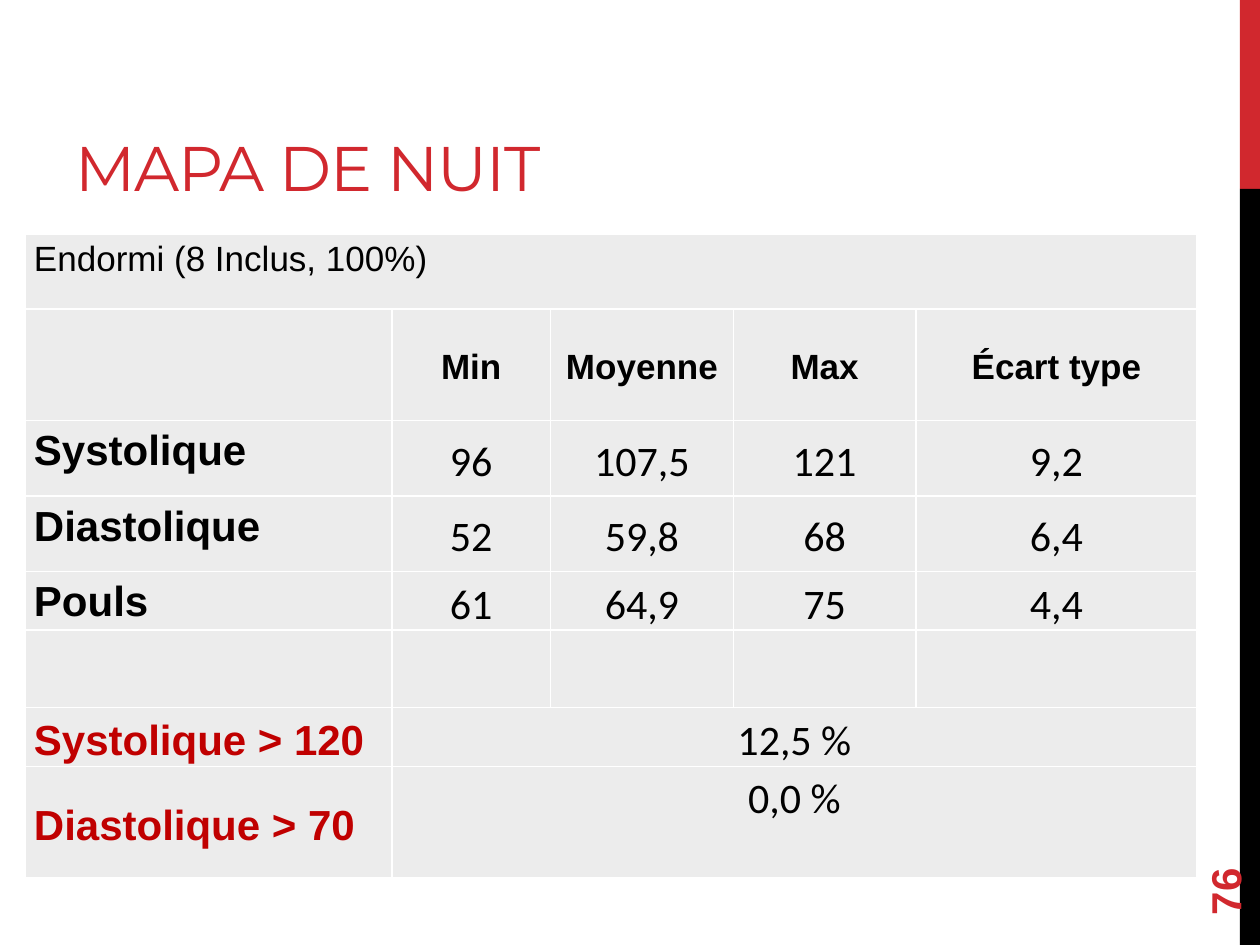
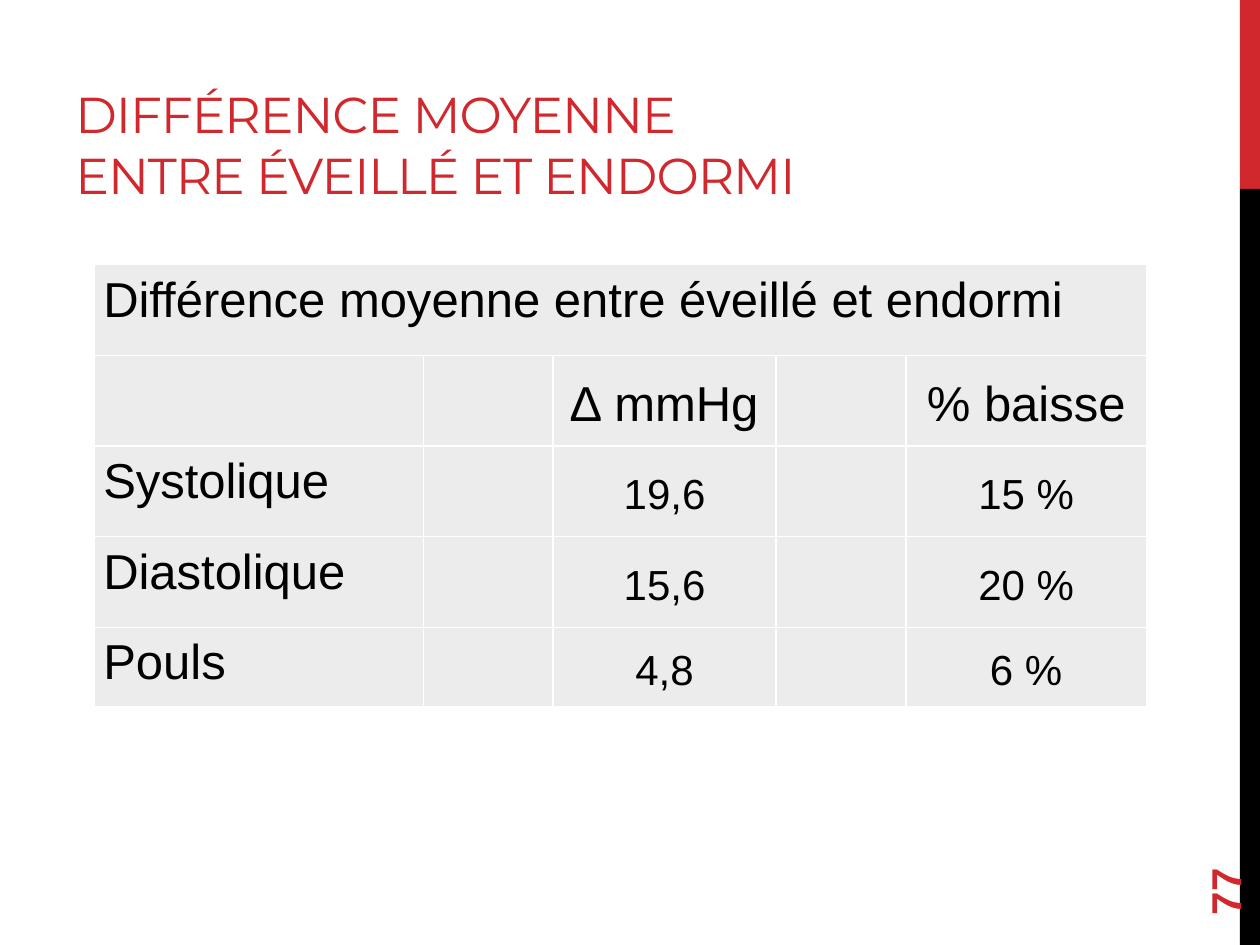
from dataclasses import dataclass, replace

from lxml.etree import SubElement
from pptx import Presentation
from pptx.dml.color import RGBColor
from pptx.enum.shapes import MSO_SHAPE
from pptx.enum.text import MSO_ANCHOR, PP_ALIGN
from pptx.oxml.ns import qn
from pptx.util import Inches, Pt


@dataclass(frozen=True)
class Style:
    size: float
    font: str = "Arial"
    color: str = "000000"
    bold: bool = False
    align: PP_ALIGN = PP_ALIGN.LEFT
    anchor: MSO_ANCHOR = MSO_ANCHOR.TOP


class Theme:
    red, black, cell, border = "D1282E", "000000", "ECECEC", "FFFFFF"
    title = Style(36, "Montserrat", red, anchor=MSO_ANCHOR.BOTTOM)
    long_title = replace(title, size=28.8)
    number = Style(24, color=red, bold=True, anchor=MSO_ANCHOR.MIDDLE)

    caption = Style(20)
    header = Style(20, bold=True, align=PP_ALIGN.CENTER, anchor=MSO_ANCHOR.MIDDLE)
    label = Style(24, bold=True)
    value = Style(24, "Calibri", align=PP_ALIGN.CENTER, anchor=MSO_ANCHOR.MIDDLE)
    alert = Style(24, color="C00000", bold=True, anchor=MSO_ANCHOR.MIDDLE)
    rate = replace(value, anchor=MSO_ANCHOR.TOP)

    big_label = Style(28)
    big_header = replace(header, size=28, bold=False)
    difference = replace(value, font="Arial")


def x(percent):
    return Inches(10 * percent / 100)


def y(percent):
    return Inches(7.5 * percent / 100)


def box(left, top, width, height):
    return x(left), y(top), x(width), y(height)


def format_paragraph(p, style):
    p.alignment = style.align
    p.font.name = style.font
    p.font.size = Pt(style.size)
    p.font.bold = style.bold
    p.font.color.rgb = RGBColor.from_string(style.color)


def add_text(s, text, area, style):
    sp = s.shapes.add_textbox(*box(*area))
    tf = sp.text_frame
    tf.word_wrap = True
    tf.vertical_anchor = style.anchor
    p = tf.paragraphs[0]
    p.text = text
    format_paragraph(p, style)
    return sp


def add_band(s, top, height, color):
    sp = s.shapes.add_shape(MSO_SHAPE.RECTANGLE, *box(98.4, top, 1.6, height))
    sp.shadow.inherit = False
    sp.fill.solid()
    sp.fill.fore_color.rgb = RGBColor.from_string(color)
    sp.line.fill.background()


def add_slide(prs, title, number, style=Theme.title):
    s = prs.slides.add_slide(prs.slide_layouts[6])
    add_band(s, 0, 20, Theme.red)
    add_band(s, 20, 80, Theme.black)
    sp = add_text(s, title, (5, 2.27, 63.3, 20), style)
    for r in sp.text_frame.paragraphs[0].runs:
        r._r.get_or_add_rPr().set("spc", "-60")
    add_text(s, number, (90, 85.87, 14.4, 5.33), Theme.number).rotation = 270
    return s


def paint_cell(cell):
    cell.fill.solid()
    cell.fill.fore_color.rgb = RGBColor.from_string(Theme.cell)
    cell.margin_left = cell.margin_right = Inches(0.07)
    cell.margin_top = cell.margin_bottom = 0
    tc_pr = cell._tc.get_or_add_tcPr()
    for i, side in enumerate(("lnL", "lnR", "lnT", "lnB")):
        ln = SubElement(tc_pr, qn(f"a:{side}"), w=str(Pt(1)))
        fill = SubElement(ln, qn("a:solidFill"))
        SubElement(fill, qn("a:srgbClr"), val=Theme.border)
        tc_pr.insert(i, ln)


def write_cell(cell, text, style):
    cell.vertical_anchor = style.anchor
    p = cell.text_frame.paragraphs[0]
    p.text = text
    p.line_spacing = 1.15
    format_paragraph(p, style)


def add_grid(s, left, top, columns, heights, rows, spans):
    area = box(left, top, sum(columns), sum(heights))
    table = s.shapes.add_table(len(heights), len(columns), *area).table
    table.first_row = table.horz_banding = False
    for column, width in zip(table.columns, columns):
        column.width = x(width)
    for row, height in zip(table.rows, heights):
        row.height = y(height)
    for cell in table.iter_cells():
        paint_cell(cell)
    for row, first in spans:
        table.cell(row, first).merge(table.cell(row, len(columns) - 1))
    for i, (texts, lead, rest) in enumerate(rows):
        for j, text in enumerate(texts):
            if text:
                write_cell(table.cell(i, j), text, rest if j else lead)


def night_slide(prs):
    t = Theme
    s = add_slide(prs, "MAPA DE NUIT", "76")
    rows = [
        (["Endormi (8 Inclus, 100%)"], t.caption, t.caption),
        (["", "Min", "Moyenne", "Max", "Écart type"], t.header, t.header),
        (["Systolique", "96", "107,5", "121", "9,2"], t.label, t.value),
        (["Diastolique", "52", "59,8", "68", "6,4"], t.label, t.value),
        (["Pouls", "61", "64,9", "75", "4,4"], t.label, t.value),
        ([], t.label, t.value),
        (["Systolique > 120", "12,5 %"], t.alert, t.rate),
        (["Diastolique > 70", "0,0 %"], t.alert, t.rate),
    ]
    add_grid(s, 2, 24.8, [29.1, 12.6, 14.5, 14.5, 22.3],
             [7.9, 11.8, 8, 8, 6.2, 8.2, 6.2, 11.8],
             rows, [(0, 0), (6, 1), (7, 1)])


def difference_slide(prs):
    t = Theme
    s = add_slide(prs, "DIFFÉRENCE MOYENNE\vENTRE ÉVEILLÉ ET ENDORMI", "77", t.long_title)
    rows = [
        (["Différence moyenne entre éveillé et endormi"], t.big_label, t.big_label),
        (["", "", "∆ mmHg", "", "% baisse"], t.big_header, t.big_header),
        (["Systolique", "", "19,6", "", "15 %"], t.big_label, t.difference),
        (["Diastolique", "", "15,6", "", "20 %"], t.big_label, t.difference),
        (["Pouls", "", "4,8", "", "6 %"], t.big_label, t.difference),
    ]
    add_grid(s, 7.5, 28, [26.1, 10.3, 17.7, 10.3, 19.1],
             [9.6] * 4 + [8.4], rows, [(0, 0)])


def main():
    prs = Presentation()
    prs.slide_width, prs.slide_height = x(100), y(100)
    night_slide(prs)
    difference_slide(prs)
    prs.save("out.pptx")


if __name__ == "__main__":
    main()
